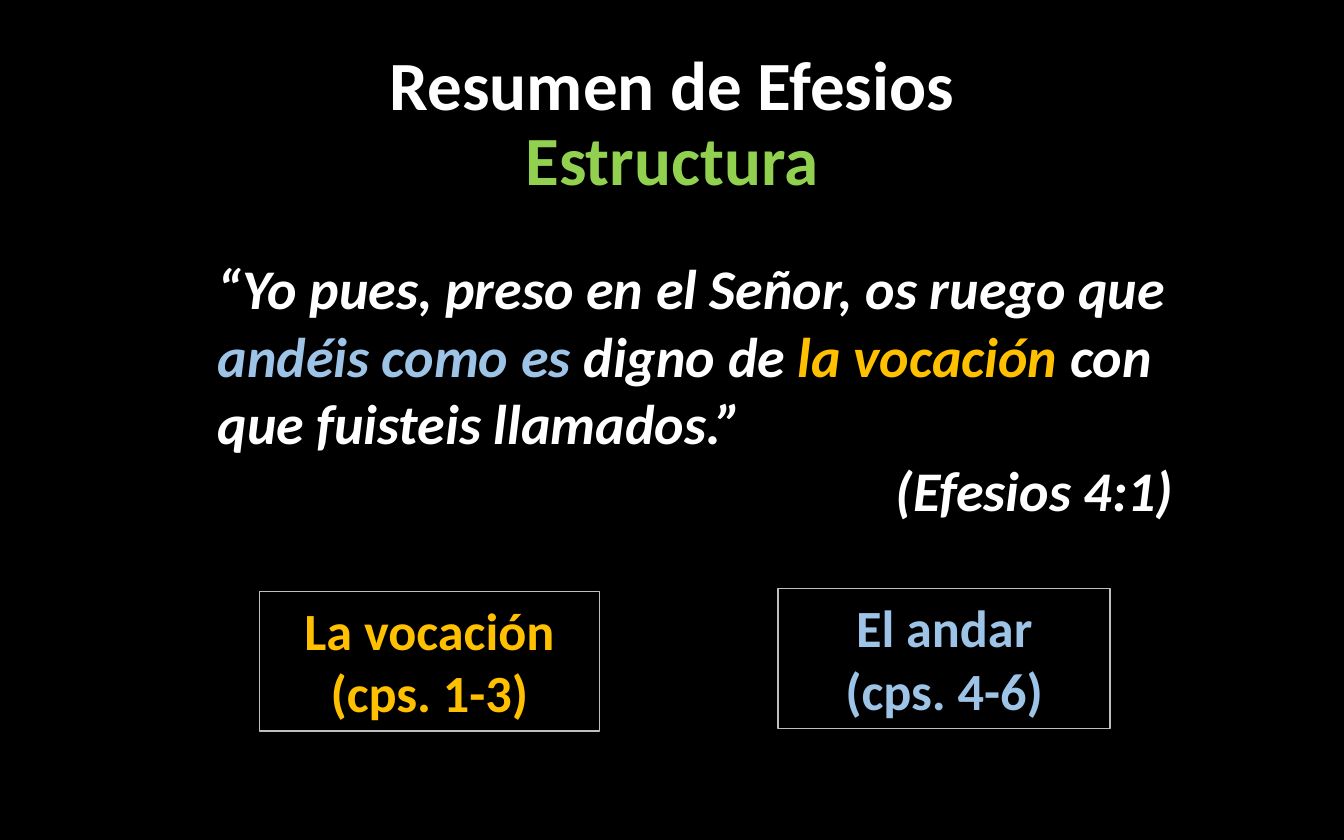
from pptx import Presentation
from pptx.dml.color import RGBColor
from pptx.enum.shapes import MSO_SHAPE
from pptx.enum.text import MSO_ANCHOR, PP_ALIGN
from pptx.util import Inches, Pt

LEFT, CENTER, RIGHT = PP_ALIGN.LEFT, PP_ALIGN.CENTER, PP_ALIGN.RIGHT
TOP, MIDDLE = MSO_ANCHOR.TOP, MSO_ANCHOR.MIDDLE
RECTANGLE = MSO_SHAPE.RECTANGLE

COLORS = {
    "background": "000000",
    "text": "FFFFFF",
    "structure": "92D050",
    "calling": "FFC000",
    "walk": "9DC3E6",
    "border": "BFBFBF",
}
TITLE_FONT = {"name": "Calibri", "size": Pt(37), "bold": True}
VERSE_FONT = {"name": "Calibri", "size": Pt(30), "bold": True, "italic": True}
SECTION_FONT = {"name": "Calibri", "size": Pt(28), "bold": True}


def rgb(color):
    return RGBColor.from_string(COLORS[color])


def add_run(paragraph, text, color, font_format):
    run = paragraph.add_run()
    run.text = text
    for attribute, value in font_format.items():
        setattr(run.font, attribute, value)
    run.font.color.rgb = rgb(color)


def prepare_frame(shape, anchor):
    frame = shape.text_frame
    frame.word_wrap = True
    frame.vertical_anchor = anchor
    return frame


def add_title(slide, lines):
    box = slide.shapes.add_textbox(Inches(0.69), Inches(0.33), Inches(8.62), Inches(1.21))
    paragraph = prepare_frame(box, MIDDLE).paragraphs[0]
    paragraph.alignment = CENTER
    paragraph.line_spacing = 0.9
    for index, (text, color) in enumerate(lines):
        if index:
            paragraph.add_line_break()
        add_run(paragraph, text, color, TITLE_FONT)


def add_verse(slide, phrases, reference):
    box = slide.shapes.add_textbox(Inches(1.52), Inches(1.84), Inches(7.31), Inches(2.12))
    frame = prepare_frame(box, TOP)
    quotation = frame.paragraphs[0]
    quotation.alignment = LEFT
    for text, color in phrases:
        add_run(quotation, text, color, VERSE_FONT)
    citation = frame.add_paragraph()
    citation.alignment = RIGHT
    add_run(citation, reference, "text", VERSE_FONT)


def add_section(slide, left, top, width, name, chapters, color):
    box = slide.shapes.add_shape(
        RECTANGLE, Inches(left), Inches(top), Inches(width), Inches(1.04))
    box.shadow.inherit = False
    box.fill.background()
    box.line.color.rgb = rgb("border")
    box.line.width = Pt(0.75)
    frame = prepare_frame(box, TOP)
    for paragraph, text in ((frame.paragraphs[0], name), (frame.add_paragraph(), chapters)):
        paragraph.alignment = CENTER
        add_run(paragraph, text, color, SECTION_FONT)


def main():
    presentation = Presentation()
    presentation.slide_width = Inches(10)
    presentation.slide_height = Inches(6.25)
    slide = presentation.slides.add_slide(presentation.slide_layouts[6])
    slide.background.fill.solid()
    slide.background.fill.fore_color.rgb = rgb("background")

    # Heading
    add_title(slide, [("Resumen de Efesios", "text"), ("Estructura", "structure")])

    # Key verse, with the two themes in colour
    add_verse(slide, [
        ("“Yo pues, preso en el Señor, os ruego que ", "text"),
        ("andéis como es ", "walk"),
        ("digno de ", "text"),
        ("la vocación ", "calling"),
        ("con que fuisteis llamados.”", "text"),
    ], "(Efesios 4:1)")

    # The two halves of the letter
    add_section(slide, 5.79, 4.38, 2.47, "El andar", "(cps. 4-6)", "walk")
    add_section(slide, 1.93, 4.4, 2.53, "La vocación", "(cps. 1-3)", "calling")

    presentation.save("out.pptx")


if __name__ == "__main__":
    main()
